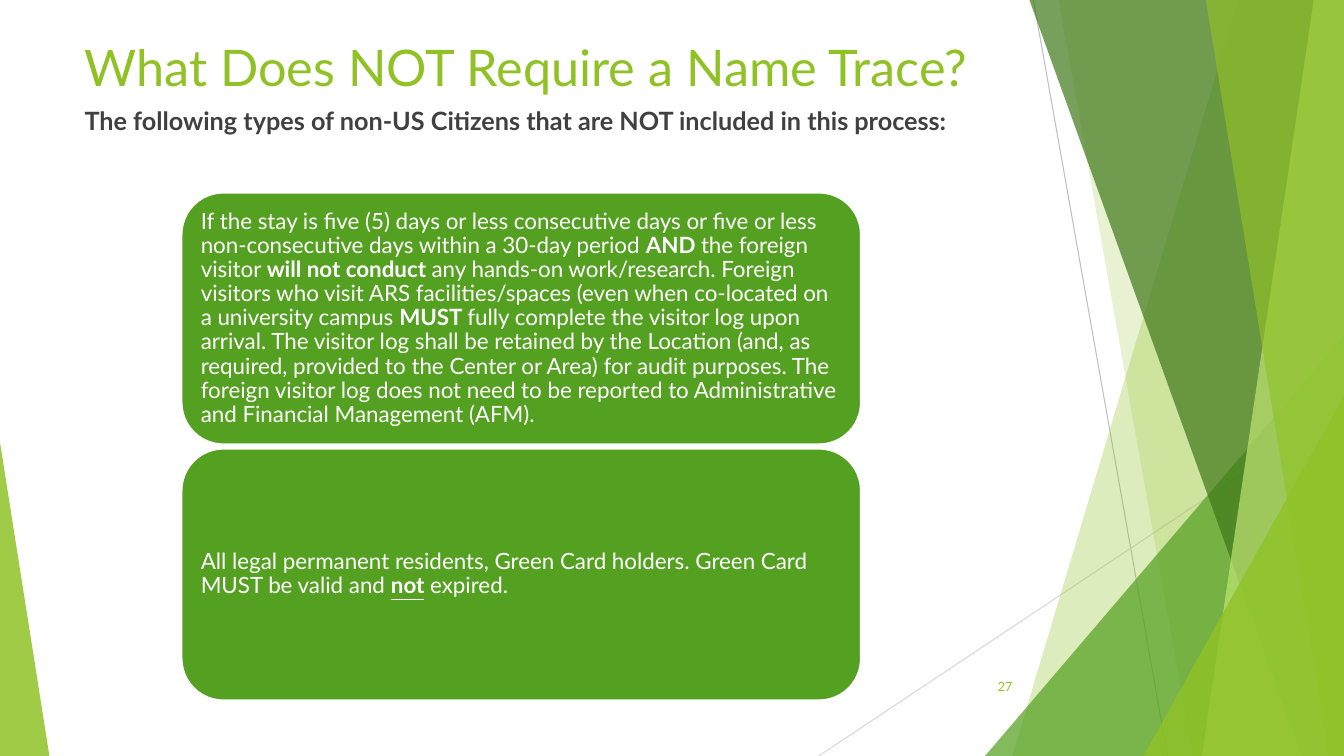
from lxml.etree import SubElement
from pptx import Presentation
from pptx.dml.color import RGBColor
from pptx.enum.shapes import MSO_CONNECTOR, MSO_SHAPE
from pptx.enum.text import MSO_ANCHOR, PP_ALIGN
from pptx.oxml.ns import qn
from pptx.util import Inches, Pt

LIME = RGBColor(0x90, 0xC2, 0x26)
PALE_LIME = RGBColor(0xC0, 0xE4, 0x74)
GREEN = RGBColor(0x54, 0xA0, 0x21)
DARK_GREEN = RGBColor(0x3F, 0x78, 0x19)
LIGHT_GRAY = RGBColor(0xD9, 0xD9, 0xD9)
MID_GRAY = RGBColor(0xBF, 0xBF, 0xBF)
DARK_GRAY = RGBColor(0x40, 0x40, 0x40)
WHITE = RGBColor(0xFF, 0xFF, 0xFF)
WIDTH, HEIGHT = 13.33, 7.5

presentation = Presentation()
presentation.slide_width = Inches(WIDTH)
presentation.slide_height = Inches(HEIGHT)
slide = presentation.slides.add_slide(presentation.slide_layouts[6])


def write_text(shape, runs, size, color, align=PP_ALIGN.LEFT, anchor=MSO_ANCHOR.TOP,
               line_spacing=None, inset=None):
    """Fill a shape with one paragraph of (text, style) runs; style holds b and u."""
    frame = shape.text_frame
    frame.word_wrap = True
    frame.vertical_anchor = anchor
    if inset is not None:
        frame.margin_left = frame.margin_right = Inches(inset)
        frame.margin_top = frame.margin_bottom = Inches(inset)
    paragraph = frame.paragraphs[0]
    paragraph.alignment = align
    paragraph.line_spacing = line_spacing
    for text, style in runs:
        run = paragraph.add_run()
        run.text = text
        run.font.name = "Lato"
        run.font.size = Pt(size)
        run.font.color.rgb = color
        run.font.bold = "b" in style
        run.font.underline = "u" in style


# Thin crossing lines
for x1, y1, x2, y2, color in [(10.25, 0, 11.58, HEIGHT, MID_GRAY),
                              (WIDTH, 4.03, 8.12, HEIGHT, LIGHT_GRAY)]:
    line = slide.shapes.add_connector(MSO_CONNECTOR.STRAIGHT, Inches(x1), Inches(y1),
                                      Inches(x2), Inches(y2))
    line.line.color.rgb = color
    line.line.width = Pt(0.75)
    SubElement(line._element.spPr, qn("a:effectLst"))

# Translucent facets, back to front
# band: top x, bottom x (runs to the right edge); triangle: left, top, right, apex
facets = [
    ("band", (12.28, 10.04), LIME, 30),
    ("band", (10.5, 11.83), LIME, 20),
    ("triangle", (9.77, 3.33, WIDTH, 1), GREEN, 72),
    ("band", (10.21, 12.91), DARK_GREEN, 70),
    ("band", (13.03, 11.92), PALE_LIME, 70),
    ("band", (11.96, 13.18), LIME, 65),
    ("triangle", (11.34, 3.93, WIDTH, 1), LIME, 80),
    ("triangle", (0, 4.39, 0.49, 0), LIME, 85),
]
for kind, geometry, color, opacity in facets:
    if kind == "band":
        top_x, bottom_x = geometry
        builder = slide.shapes.build_freeform(Inches(top_x), 0)
        builder.add_line_segments([(Inches(x), Inches(y)) for x, y in
                                   [(WIDTH, 0), (WIDTH, HEIGHT), (bottom_x, HEIGHT)]])
        facet = builder.convert_to_shape()
    else:
        left, top, right, apex = geometry
        facet = slide.shapes.add_shape(MSO_SHAPE.ISOSCELES_TRIANGLE, Inches(left), Inches(top),
                                       Inches(right - left), Inches(HEIGHT - top))
        facet.adjustments[0] = apex
    facet.shadow.inherit = False
    facet.line.fill.background()
    facet.fill.solid()
    facet.fill.fore_color.rgb = color
    color_element = facet._element.spPr.find(qn("a:solidFill"))[0]
    SubElement(color_element, qn("a:alpha"), val=str(opacity * 1000))

# Title, subtitle and slide number
title = slide.shapes.add_textbox(Inches(0.74), Inches(0.31), Inches(9.4), Inches(0.69))
write_text(title, [("What Does NOT Require a Name Trace?", "")], 36, LIME)
subtitle = slide.shapes.add_textbox(Inches(0.74), Inches(1), Inches(9.4), Inches(0.6))
write_text(subtitle, [("The following types of non-US Citizens that are NOT included "
                       "in this process:", "b")], 18, DARK_GRAY)
number = slide.shapes.add_textbox(Inches(9.39), Inches(6.61), Inches(0.75), Inches(0.4))
write_text(number, [("27", "")], 9, LIME, align=PP_ALIGN.RIGHT, anchor=MSO_ANCHOR.MIDDLE)

# Exemption cards
exemptions = [
    [("If the stay is five (5) days or less consecutive days or five or less "
      "non-consecutive days within a 30-day period ", ""),
     ("AND ", "b"), ("the foreign visitor ", ""), ("will not conduct ", "b"),
     ("any hands-on work/research. Foreign visitors who visit ARS facilities/spaces "
      "(even when co-located on a university campus ", ""),
     ("MUST ", "b"),
     ("fully complete the visitor log upon arrival. The visitor log shall be retained by "
      "the Location (and, as required, provided to the Center or Area) for audit purposes. "
      "The foreign visitor log does not need to be reported to Administrative and "
      "Financial Management (AFM).", "")],
    [("All legal permanent residents, Green Card holders. Green Card MUST be valid and ", ""),
     ("not", "bu"), (" expired.", "")],
]
for index, runs in enumerate(exemptions):
    card = slide.shapes.add_shape(MSO_SHAPE.ROUNDED_RECTANGLE, Inches(1.8),
                                  Inches(1.91 + 2.54 * index), Inches(6.74), Inches(2.5))
    card.shadow.inherit = False
    card.fill.solid()
    card.fill.fore_color.rgb = GREEN
    card.line.color.rgb = WHITE
    card.line.width = Pt(1.5)
    write_text(card, runs, 16, WHITE, anchor=MSO_ANCHOR.MIDDLE, line_spacing=0.9, inset=0.07)

presentation.save("out.pptx")
